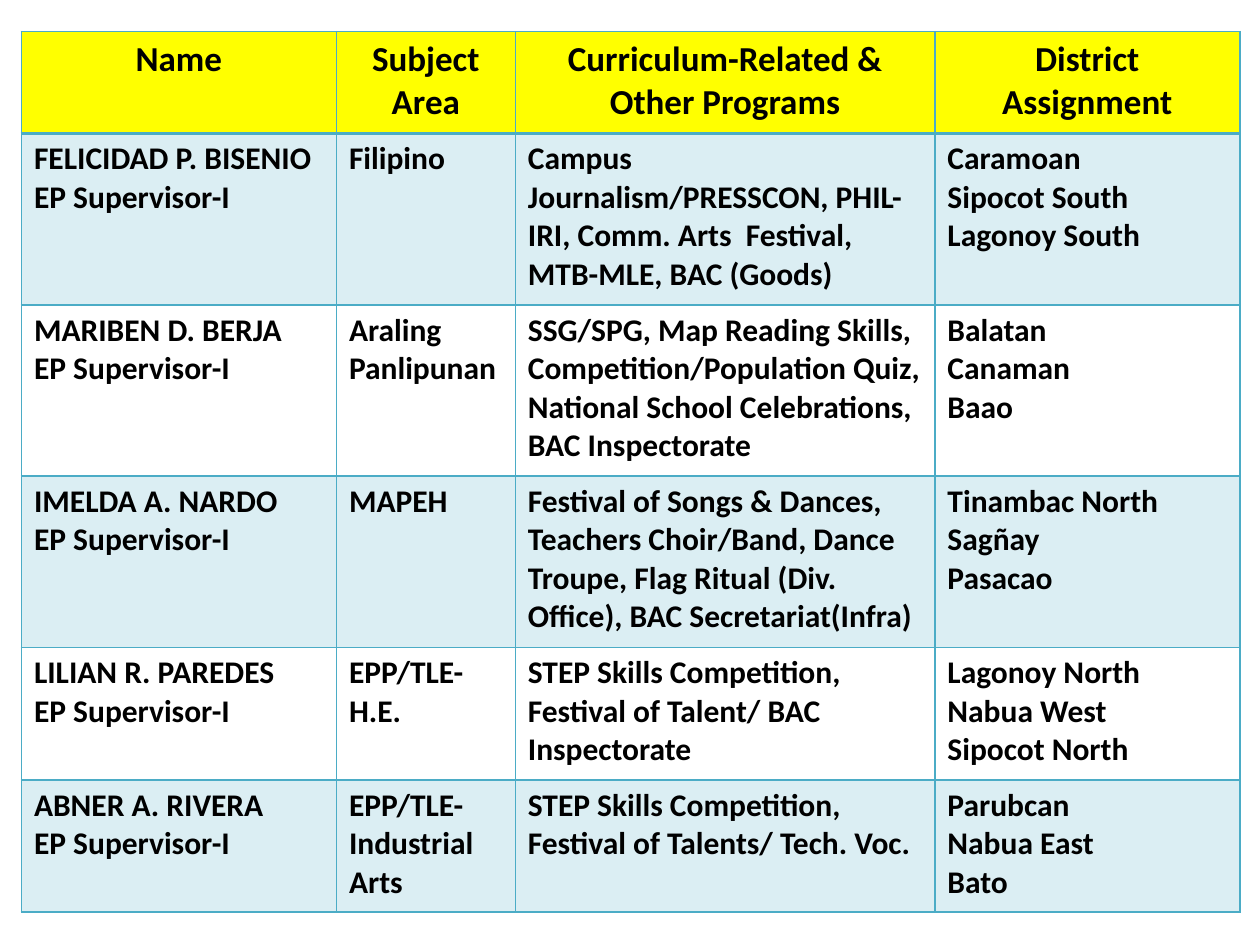
from lxml.etree import SubElement
from pptx import Presentation
from pptx.dml.color import RGBColor
from pptx.enum.text import PP_ALIGN
from pptx.oxml.ns import qn
from pptx.util import Inches, Pt

HEADERS = ["Name", "Subject Area", "Curriculum-Related & Other Programs", "District Assignment"]
POSITION = "EP Supervisor-I"
# name, subject area, programs, districts
SUPERVISORS = [
    ("FELICIDAD P. BISENIO", "Filipino",
     "Campus Journalism/PRESSCON, PHIL-IRI, Comm. Arts  Festival, MTB-MLE, BAC (Goods)",
     ["Caramoan", "Sipocot South", "Lagonoy South"]),
    ("MARIBEN D. BERJA", "Araling Panlipunan",
     "SSG/SPG, Map Reading Skills, Competition/Population Quiz, "
     "National School Celebrations, BAC Inspectorate",
     ["Balatan", "Canaman", "Baao"]),
    ("IMELDA A. NARDO", "MAPEH",
     "Festival of Songs & Dances, Teachers Choir/Band, Dance Troupe, "
     "Flag Ritual (Div. Office), BAC Secretariat(Infra)",
     ["Tinambac North", "Sagñay", "Pasacao"]),
    ("LILIAN R. PAREDES", "EPP/TLE-H.E.",
     "STEP Skills Competition, Festival of Talent/ BAC Inspectorate",
     ["Lagonoy North", "Nabua West", "Sipocot North"]),
    ("ABNER A. RIVERA", "EPP/TLE-Industrial Arts",
     "STEP Skills Competition, Festival of Talents/ Tech. Voc.",
     ["Parubcan", "Nabua East", "Bato"]),
]
COLUMN_WIDTHS = [2.5, 1.42, 3.33, 2.42]
ROW_HEIGHTS = [0.81, 1.36, 1.36, 1.36, 1.05, 1.05]
LEFT, TOP = 0.17, 0.25
TEAL, YELLOW, BLACK = "4BACC6", "FFFF00", "000000"
BAND_OPACITY = 20
HEADER_SIZE, BODY_SIZE = 20, 18


def rgb(color):
    return RGBColor.from_string(color)


def set_borders(cell, bottom_width, top_width):
    properties = cell._tc.get_or_add_tcPr()
    for side, width in (("L", 1), ("R", 1), ("T", top_width), ("B", bottom_width)):
        line = SubElement(properties, qn(f"a:ln{side}"), w=str(Pt(width)))
        fill = SubElement(line, qn("a:solidFill"))
        SubElement(fill, qn("a:srgbClr"), val=TEAL)


def set_fill(cell, color, opacity=100):
    cell.fill.solid()
    cell.fill.fore_color.rgb = rgb(color)
    if opacity < 100:
        color_element = cell._tc.tcPr.find(qn("a:solidFill")).find(qn("a:srgbClr"))
        SubElement(color_element, qn("a:alpha"), val=str(opacity * 1000))


def write(cell, lines, size, alignment):
    cell.text = "\n".join(lines)
    for paragraph in cell.text_frame.paragraphs:
        paragraph.alignment = alignment
        font = paragraph.font
        font.name, font.size, font.bold = "Calibri", Pt(size), True
        font.color.rgb = rgb(BLACK)


def style_cell(cell, row):
    set_borders(cell, bottom_width=2 if row == 0 else 1, top_width=2 if row == 1 else 1)
    if row == 0:
        set_fill(cell, YELLOW)
    elif row % 2:
        set_fill(cell, TEAL, BAND_OPACITY)
    else:
        cell.fill.background()


def main():
    presentation = Presentation()
    presentation.slide_width, presentation.slide_height = Inches(10), Inches(7.5)
    slide = presentation.slides.add_slide(presentation.slide_layouts[6])

    rows = [[[header] for header in HEADERS]]
    rows += [[[name, POSITION], [subject], [programs], districts]
             for name, subject, programs, districts in SUPERVISORS]
    table = slide.shapes.add_table(
        len(rows), len(HEADERS), Inches(LEFT), Inches(TOP),
        Inches(sum(COLUMN_WIDTHS)), Inches(sum(ROW_HEIGHTS))).table
    for column, width in zip(table.columns, COLUMN_WIDTHS):
        column.width = Inches(width)
    for row, height in zip(table.rows, ROW_HEIGHTS):
        row.height = Inches(height)

    for row, contents in enumerate(rows):
        size, alignment = ((HEADER_SIZE, PP_ALIGN.CENTER) if row == 0
                           else (BODY_SIZE, PP_ALIGN.LEFT))
        for column, lines in enumerate(contents):
            cell = table.cell(row, column)
            style_cell(cell, row)
            write(cell, lines, size, alignment)
    table.first_row = table.horz_banding = False
    presentation.save("out.pptx")


if __name__ == "__main__":
    main()
